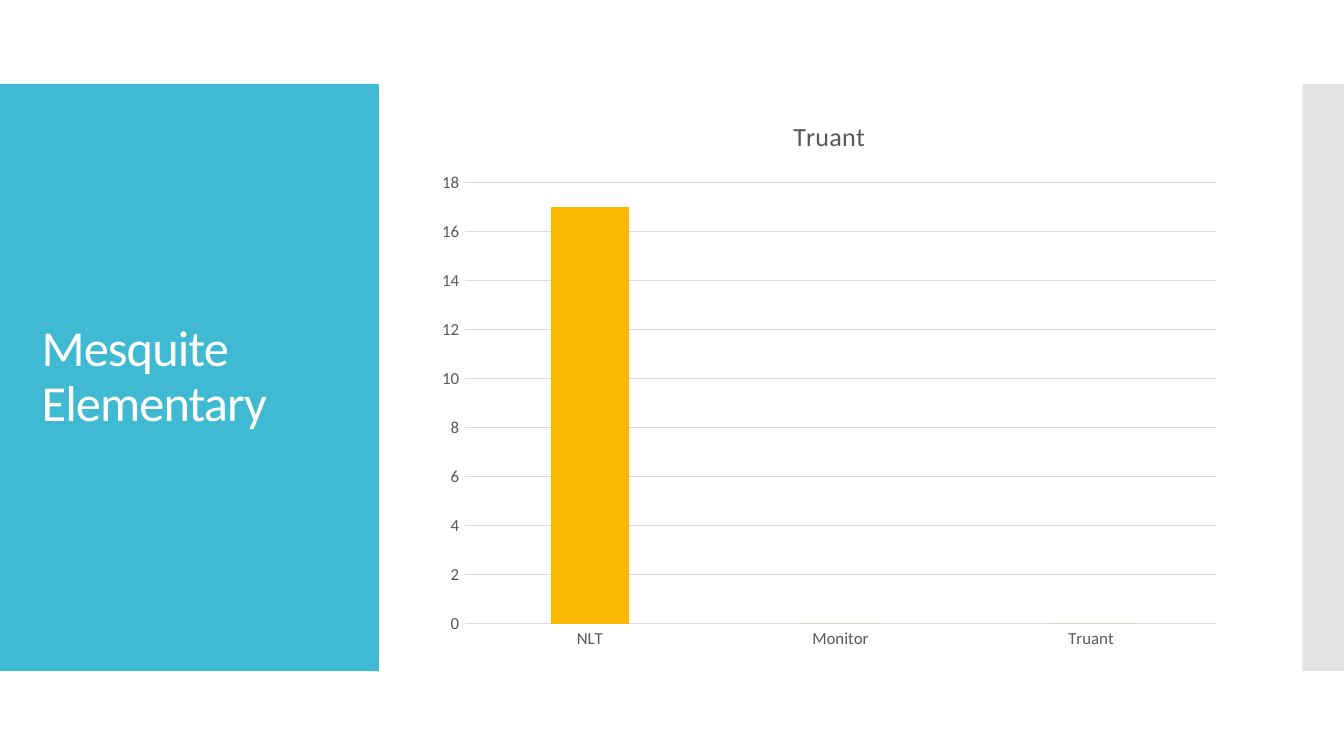
from lxml.etree import SubElement
from pptx import Presentation
from pptx.chart.data import CategoryChartData
from pptx.dml.color import RGBColor
from pptx.enum.chart import XL_CHART_TYPE as ChartType, XL_TICK_MARK as TickMark
from pptx.enum.shapes import MSO_SHAPE as Shape
from pptx.enum.text import MSO_ANCHOR as Anchor, MSO_AUTO_SIZE as AutoSize, PP_ALIGN as Align
from pptx.oxml.ns import qn
from pptx.util import Inches, Pt

COLORS = {"panel": "40BAD2", "edge": "C8C8C8", "title": "FFFFFF", "bar": "FAB900",
          "label": "595959", "grid": "D9D9D9", "text": "000000"}
FONT = "Calibri"
WIDTH = 10
HEIGHT = WIDTH * 9 / 16
BAND_TOP, BAND_HEIGHT = HEIGHT / 9, 4.37


def rgb(name):
    return RGBColor.from_string(COLORS[name])


def set_font(font, size, color):
    font.name = FONT
    font.size = Pt(size)
    font.bold = False
    font.color.rgb = rgb(color)


def set_line(line, color):
    line.color.rgb = rgb(color)
    line.width = Pt(0.75)


def add_block(s, box, color, alpha=None):
    sp = s.shapes.add_shape(Shape.RECTANGLE, *map(Inches, box))
    sp.shadow.inherit = False
    sp.fill.solid()
    sp.fill.fore_color.rgb = rgb(color)
    sp.line.fill.background()
    if alpha is not None:
        fill = sp.element.spPr.find(qn("a:solidFill"))
        SubElement(fill[0], qn("a:alpha"), val=str(alpha * 1000))


def add_title_panel(s, box, text):
    left, top, width, height = box
    add_block(s, box, "panel")
    title = s.shapes.title
    s.shapes.element.append(title.element)  # bring the title above the panel
    title.left, title.top = Inches(left + 0.21), Inches(top + 0.3)
    title.width, title.height = Inches(width - 0.4), Inches(height - 0.6)
    tf = title.text_frame
    tf.text = text
    tf.word_wrap = True
    tf.auto_size = AutoSize.NONE
    tf.vertical_anchor = Anchor.MIDDLE
    p = tf.paragraphs[0]
    p.alignment = Align.LEFT
    p.line_spacing = 0.9
    r = p.runs[0]
    set_font(r.font, 27, "title")
    r.font._element.set("spc", "-50")


def add_truancy_chart(s, box):
    data = CategoryChartData()
    data.categories = ["NLT", "Monitor", "Truant"]
    data.add_series("Series 1", (17, 0, 0))
    chart = s.shapes.add_chart(ChartType.COLUMN_CLUSTERED, *map(Inches, box), data).chart
    set_font(chart.font, 10, "text")
    chart.has_legend = False

    # Chart title
    chart.has_title = True
    tf = chart.chart_title.text_frame
    tf.text = "Truant"
    set_font(tf.paragraphs[0].runs[0].font, 14, "label")
    chart.chart_title.include_in_layout = False

    # Columns
    plot = chart.plots[0]
    plot.vary_by_categories = False
    plot.gap_width, plot.overlap = 219, -27
    fill = plot.series[0].format.fill
    fill.solid()
    fill.fore_color.rgb = rgb("bar")

    # Axes
    for axis in (chart.category_axis, chart.value_axis):
        axis.major_tick_mark = axis.minor_tick_mark = TickMark.NONE
        set_font(axis.tick_labels.font, 9, "label")
    set_line(chart.category_axis.format.line, "grid")
    values = chart.value_axis
    values.minimum_scale, values.maximum_scale, values.major_unit = 0, 18, 2
    values.format.line.fill.background()
    values.has_major_gridlines = True
    set_line(values.major_gridlines.format.line, "grid")


def main():
    prs = Presentation()
    prs.slide_width, prs.slide_height = Inches(WIDTH), Inches(HEIGHT)
    s = prs.slides.add_slide(prs.slide_layouts[5])
    add_title_panel(s, (0, BAND_TOP, 2.82, BAND_HEIGHT), "Mesquite Elementary")
    add_block(s, (9.69, BAND_TOP, WIDTH - 9.69, BAND_HEIGHT), "edge", alpha=50)
    add_truancy_chart(s, (3.17, 0.71, 6, 4.2))
    prs.save("out.pptx")


if __name__ == "__main__":
    main()
